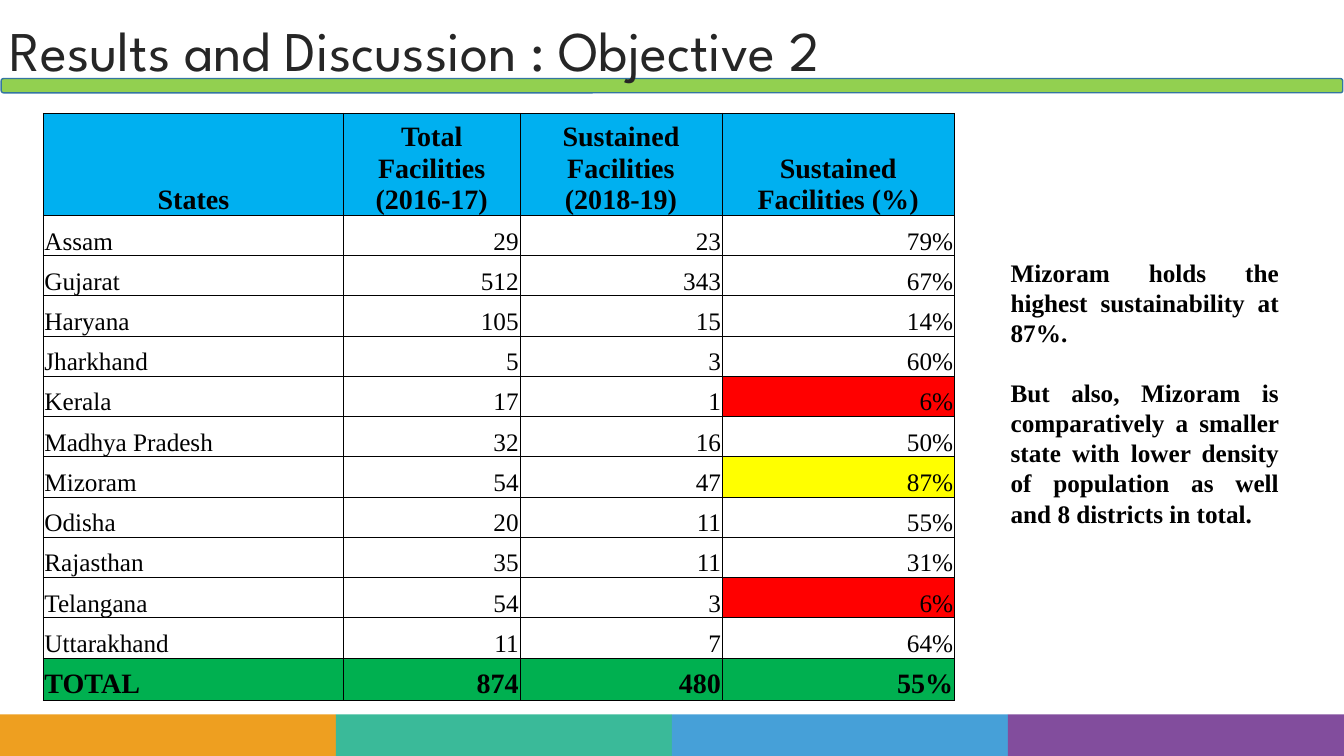
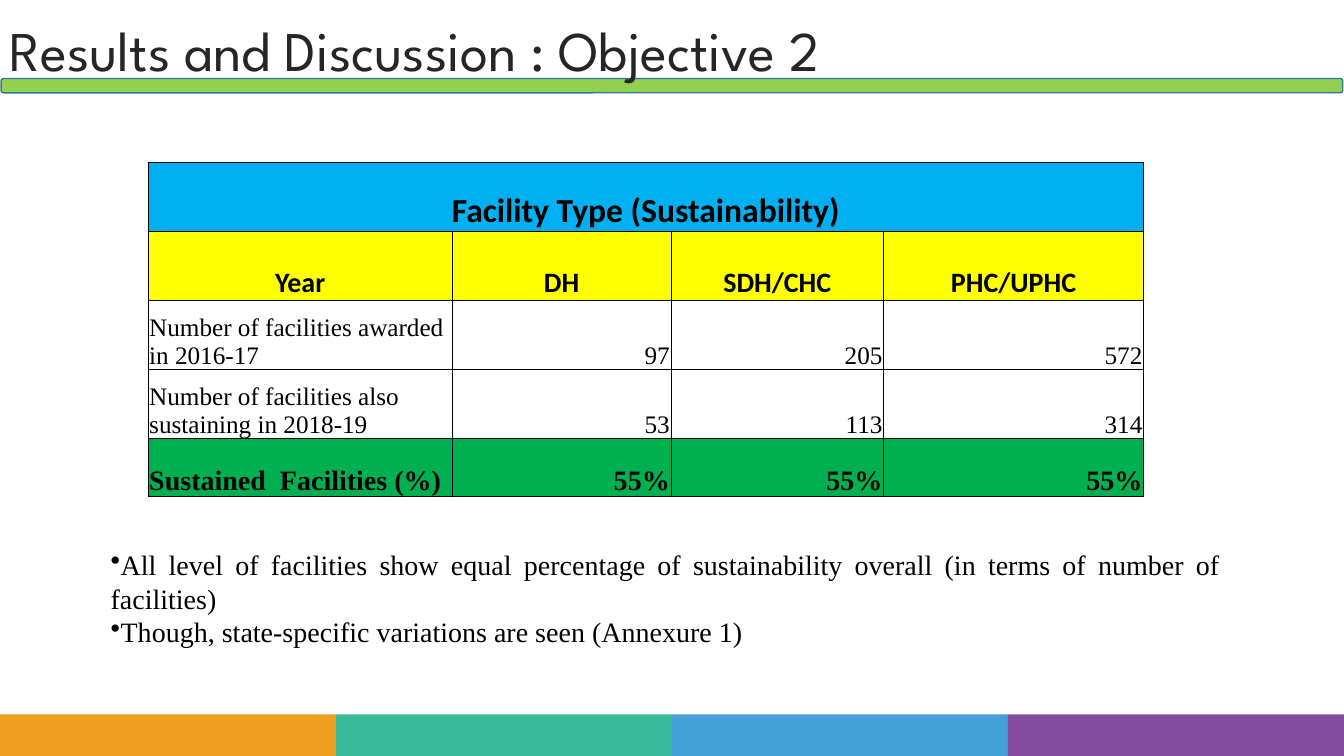
"""Builds two slides on how many facilities sustained their award."""
import lxml.etree
import pptx
import pptx.dml.color
import pptx.enum.shapes
import pptx.enum.text
import pptx.oxml.ns
import pptx.util

Cm, Pt = pptx.util.Cm, pptx.util.Pt
align = pptx.enum.text.PP_ALIGN
anchor = pptx.enum.text.MSO_ANCHOR
shapes = pptx.enum.shapes.MSO_SHAPE
qn = pptx.oxml.ns.qn

hues = {
    "orange": "EE9F20", "teal": "3ABA99", "blue": "46A0D8", "purple": "824D9D",
    "lime": "92D050", "edge": "3476A0", "title": "262626", "black": "000000",
    "sky": "00B0F0", "green": "00B050", "red": "FF0000", "yellow": "FFFF00",
}
rgb = {name: pptx.dml.color.RGBColor.from_string(code) for name, code in hues.items()}
serif = "Times New Roman"
styles = {
    "top": ("Calibri", 24, True, "sky"),
    "year": ("Calibri", 20, True, "yellow"),
    "head": (serif, 20, True, "sky"),
    "body": (serif, 18, False, None),
    "total": (serif, 20, True, "green"),
}
wide, high = 33.87, 19.05


def write(frame, lines, face, size, bold=False, hue="black", side=align.LEFT, bullet=None):
    frame.word_wrap = True
    frame.text = "\n".join(lines)
    for para in frame.paragraphs:
        para.alignment = side
        if bullet:
            mark = lxml.etree.SubElement(para._p.get_or_add_pPr(), qn("a:buChar"))
            mark.set("char", bullet)
        font = para.font
        font.name, font.size, font.bold = face, Pt(size), bold
        font.color.rgb = rgb[hue]


def grid(slide, left, top, cols, rows, marks):
    tall = sum(row[1] for row in rows)
    frame = slide.shapes.add_table(
        len(rows), len(cols), Cm(left), Cm(top), Cm(sum(cols)), Cm(tall))
    table = frame.table
    table.first_row = table.horz_banding = False
    for col, width in zip(table.columns, cols):
        col.width = Cm(width)
    for r, (kind, height, *words) in enumerate(rows):
        table.rows[r].height = Cm(height)
        face, size, bold, hue = styles[kind]
        for c in range(len(cols)):
            cell = table.cell(r, c)
            word = words[c] if c < len(words) else ""
            side = align.RIGHT if c else align.LEFT
            if kind in ("top", "year", "head"):
                side = align.CENTER
            write(cell.text_frame, word.split("\n"), face, size, bold, side=side)
            cell.vertical_anchor = anchor.BOTTOM
            cell.margin_left = cell.margin_right = cell.margin_top = Cm(0.03)
            cell.margin_bottom = 0
            for edge in ("a:lnL", "a:lnR", "a:lnT", "a:lnB"):
                line = lxml.etree.SubElement(
                    cell._tc.get_or_add_tcPr(), qn(edge), w=str(Pt(0.5)))
                paint = lxml.etree.SubElement(line, qn("a:solidFill"))
                lxml.etree.SubElement(paint, qn("a:srgbClr"), val=hues["black"])
            fill = marks.get(word, hue) if kind == "body" else hue
            if fill:
                cell.fill.solid()
                cell.fill.fore_color.rgb = rgb[fill]
            else:
                cell.fill.background()
        if len(words) == 1:
            table.cell(r, 0).merge(table.cell(r, len(cols) - 1))


deck = pptx.Presentation()
deck.slide_width, deck.slide_height = Cm(wide), Cm(high)

bands = [(shapes.RECTANGLE, i * wide / 4, 18, wide / 4, 1.05, hue)
         for i, hue in enumerate(("orange", "teal", "blue", "purple"))]
bands.append((shapes.ROUNDED_RECTANGLE, 0.03, 1.98, 33.81, 0.36, "lime"))
for _ in range(2):
    slide = deck.slides.add_slide(deck.slide_layouts[6])
    for form, left, top, width, height, hue in bands:
        band = slide.shapes.add_shape(form, Cm(left), Cm(top), Cm(width), Cm(height))
        band.shadow.inherit = False
        band.fill.solid()
        band.fill.fore_color.rgb = rgb[hue]
        if hue == "lime":
            band.line.color.rgb = rgb["edge"]
            band.line.width = Pt(1)
        else:
            band.line.fill.background()
    title = slide.shapes.add_textbox(0, 0, Cm(wide), Cm(2.69)).text_frame
    title.vertical_anchor = anchor.MIDDLE
    write(title, ["Results and Discussion : Objective 2"], "League Spartan", 40, hue="title")
    title.paragraphs[0].line_spacing = 0.9

first, second = deck.slides

states = [
    ("Assam", "29", "23", "79%"),
    ("Gujarat", "512", "343", "67%"),
    ("Haryana", "105", "15", "14%"),
    ("Jharkhand", "5", "3", "60%"),
    ("Kerala", "17", "1", "6%"),
    ("Madhya Pradesh", "32", "16", "50%"),
    ("Mizoram", "54", "47", "87%"),
    ("Odisha", "20", "11", "55%"),
    ("Rajasthan", "35", "11", "31%"),
    ("Telangana", "54", "3", "6%"),
    ("Uttarakhand", "11", "7", "64%"),
]
rows = [("head", 2.38, "States", "Total Facilities (2016-17)",
         "Sustained Facilities\n(2018-19)", "Sustained Facilities (%)")]
rows += [("body", 1.015, *state) for state in states]
rows.append(("total", 1.06, "TOTAL", "874", "480", "55%"))
grid(first, 1.09, 2.85, (7.57, 4.44, 5.1, 5.85), rows, {"6%": "red", "87%": "yellow"})

note = first.shapes.add_textbox(Cm(25.22), Cm(6.35), Cm(7.26), Cm(7.19)).text_frame
write(note, [
    "Mizoram holds the highest sustainability at 87%.",
    "But also, Mizoram is comparatively a smaller state with lower density of "
    "population as well and 8 districts in total.",
], serif, 18, True, side=align.JUSTIFY)
note.paragraphs[1].space_before = Pt(21)

rows = [
    ("top", 1.74, "Facility Type (Sustainability)"),
    ("year", 1.74, "Year", "DH", "SDH/CHC", "PHC/UPHC"),
    ("body", 1.74, "Number of facilities awarded in 2016-17", "97", "205", "572"),
    ("body", 1.74, "Number of facilities also sustaining in 2018-19", "53", "113", "314"),
    ("total", 1.45, "Sustained  Facilities (%)", "55%", "55%", "55%"),
]
grid(second, 3.73, 4.09, (7.67, 5.51, 5.36, 6.55), rows, {})

note = second.shapes.add_textbox(Cm(2.54), Cm(13.67), Cm(28.47), Cm(2.82)).text_frame
write(note, [
    "All level of facilities show equal percentage of sustainability overall "
    "(in terms of number of facilities)",
    "Though, state-specific variations are seen (Annexure 1)",
], serif, 20, side=align.JUSTIFY, bullet="•")

deck.save("out.pptx")
